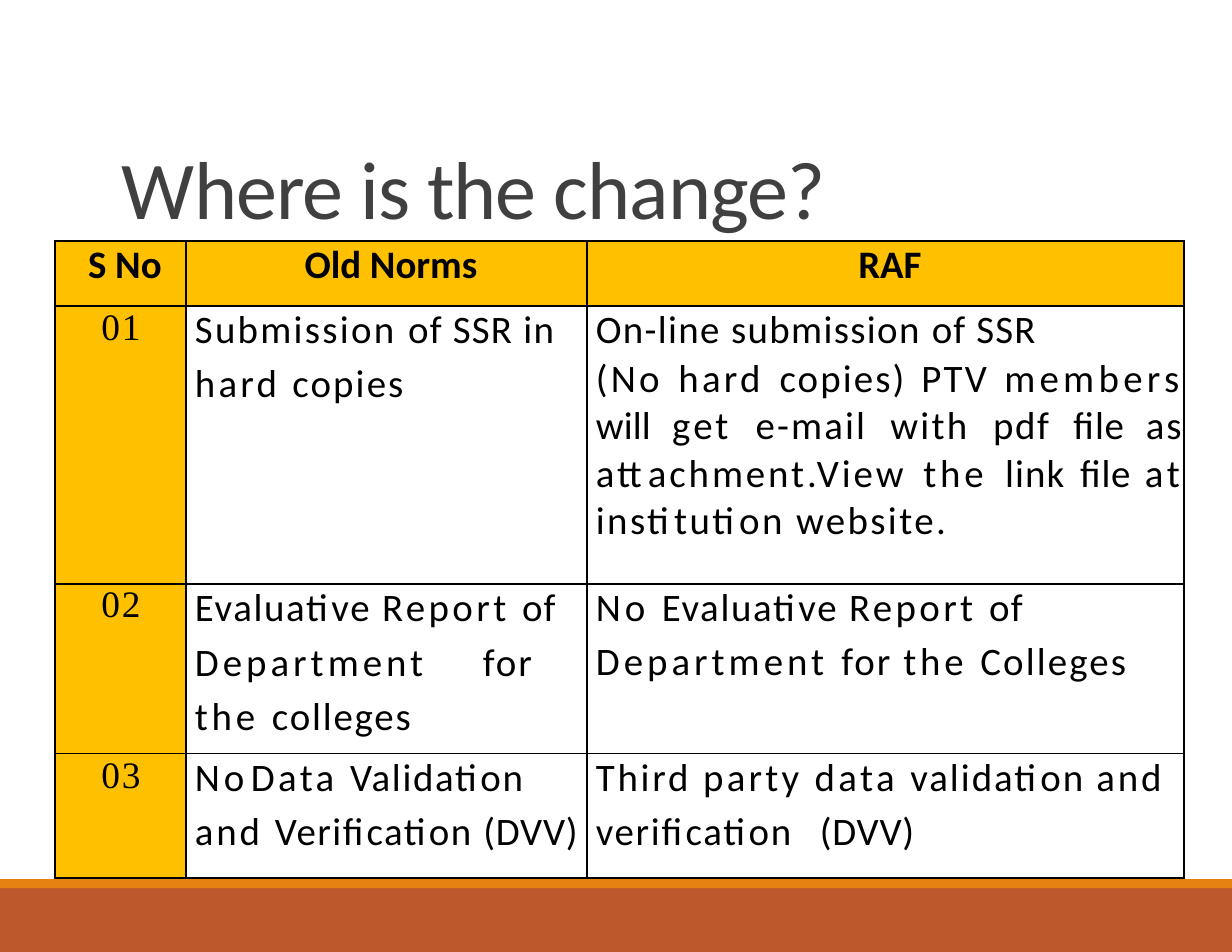
from pptx import Presentation
from pptx.dml.color import RGBColor
from pptx.enum.shapes import MSO_CONNECTOR, MSO_SHAPE
from pptx.enum.text import MSO_ANCHOR, PP_ALIGN
from pptx.util import Pt
from lxml.etree import SubElement
from pptx.oxml.ns import qn

THEME = {
    "ink": "000000", "title": "404040", "gold": "FFC000", "rule": "808080",
    "band": "BD582C", "strip": "E48312",
    "sans": "Calibri", "serif": "Times New Roman",
    "head": 25, "body": 25, "num": 24, "big": 52.8,
}
TITLE = "Where is the change?"
HEADS = [("S No", 4.3), ("Old Norms", 4.3), ("RAF", 0.8)]
ROWS = [
    ("01",
     [{"runs": [("Submission ", 1.5), ("of SSR ", 0.8), ("in", 0.9)]},
      {"runs": [("hard ", 2.1), ("copies", 1.4)]}],
     [{"runs": [("On-line submission ", 0.9), ("of ", 0.7), ("SSR", 0.8)]},
      {"before": 0.8, "runs": [
          ("(No hard ", 2.1), ("copies) ", 1.4), ("PTV ", 1.6),
          ("members ", 2.8), ("will ", 0.1), ("get ", 2), ("e-mail ", 1.4),
          ("with ", 1.5), ("pdf ", 1.1), ("file ", 0.3), ("as ", 1.4),
          ("attachment.View ", 1.9), ("the ", 2.5), ("link ", 0.7),
          ("file ", 0.3), ("at ", 2.5), ("institution website.", 1.6)]}]),
    ("02",
     [{"runs": [("Evaluative ", 1.1), ("Report ", 2.2), ("of", 0.7)]},
      {"before": 0, "line": 1.15, "right": 34, "runs": [
          ("Department ", 2.6), ("for ", 1.3), ("the ", 2.5),
          ("colleges", 1.2)]}],
     [{"runs": [("No ", 2.5), ("Evaluative ", 1.1), ("Report ", 2.2),
                ("of", 0.8)]},
      {"runs": [("Department ", 2.6), ("for ", 1.3), ("the ", 2.5),
                ("Colleges", 1.4)]}]),
    ("03",
     [{"tab": 53.3, "runs": [("No\t", 2.5), ("Data ", 2.2),
                             ("Validation", 1.1)]},
      {"runs": [("and ", 1.9), ("Verification ", 1), ("(DVV)", 0.5)]}],
     [{"runs": [("Third ", 1.8), ("party ", 2.1), ("data ", 2.2),
                ("validation ", 1.3), ("and", 1.9)]},
      {"tab": 144, "runs": [("verification\t", 1.1), ("(DVV)", 0.5)]}]),
]
WIDTHS = [84.2, 257.8, 383.8]
HEIGHTS = [41.8, 178.6, 109.4, 79.9]
VERT = [1.5, 1, 1.5, 1.5]
HORIZ = [1.5, 1.5, 1.5, 1, 1]
PAGE = (792, 612)
LEFT, TOP = 35.3, 154.8


def color(name):
    return RGBColor.from_string(THEME[name])


def style(run, size, face, tone="ink", bold=False, gap=0):
    font = run.font
    font.size, font.name, font.bold = Pt(THEME[size]), THEME[face], bold
    font.color.rgb = color(tone)
    if gap:
        run._r.get_or_add_rPr().set("spc", str(round(gap * 100)))


def layout(para, align, left, before, line=None, right=0, tab=None):
    para.alignment, para.space_before = align, Pt(before)
    if line:
        para.line_spacing = line
    props = para._p.get_or_add_pPr()
    props.set("marL", str(Pt(left)))
    props.set("indent", "0")
    if right:
        props.set("marR", str(Pt(right)))
    if tab:
        stops = SubElement(props, qn("a:tabLst"))
        SubElement(stops, qn("a:tab"), pos=str(Pt(tab)), algn="l")


def frame(cell, row, col):
    props = cell._tc.get_or_add_tcPr()
    sides = {"L": VERT[col], "R": VERT[col + 1],
             "T": HORIZ[row], "B": HORIZ[row + 1]}
    for side, width in sides.items():
        edge = SubElement(props, qn("a:ln" + side), w=str(Pt(width)))
        fill = SubElement(edge, qn("a:solidFill"))
        SubElement(fill, qn("a:srgbClr"), val=THEME["ink"])
    cell.margin_left = cell.margin_right = cell.margin_bottom = Pt(0)
    cell.margin_top = Pt(0.7)
    if row == 0 or col == 0:
        cell.fill.solid()
        cell.fill.fore_color.rgb = color("gold")
    else:
        cell.fill.background()


def label(cell, text, size, face, left, before, **look):
    para = cell.text_frame.paragraphs[0]
    para.text = text
    layout(para, PP_ALIGN.CENTER, left, before)
    style(para.runs[0], size, face, **look)


def prose(cell, paras):
    body = cell.text_frame
    for i, item in enumerate(paras):
        para = body.add_paragraph() if i else body.paragraphs[0]
        opts = {"before": 4.3 if i else 0.8, **item}
        for text, gap in opts.pop("runs"):
            run = para.add_run()
            run.text = text
            style(run, "body", "sans", gap=gap)
        layout(para, PP_ALIGN.JUSTIFY, 5.8, **opts)


def bar(slide, top, height, tone):
    shape = slide.shapes.add_shape(
        MSO_SHAPE.RECTANGLE, Pt(0), Pt(top), Pt(PAGE[0]), Pt(height))
    shape.shadow.inherit = False
    shape.fill.solid()
    shape.fill.fore_color.rgb = color(tone)
    shape.line.fill.background()


def heading(slide):
    rule = slide.shapes.add_connector(
        MSO_CONNECTOR.STRAIGHT, Pt(77.8), Pt(TOP), Pt(725), Pt(TOP))
    rule.line.color.rgb, rule.line.width = color("rule"), Pt(0.5)
    SubElement(rule._element.spPr, qn("a:effectLst"))
    box = slide.shapes.add_textbox(Pt(71.3), Pt(25.9), Pt(653), Pt(129.6))
    body = box.text_frame
    body.word_wrap, body.vertical_anchor = True, MSO_ANCHOR.BOTTOM
    body.text = TITLE
    body.paragraphs[0].line_spacing = 0.85
    style(body.paragraphs[0].runs[0], "big", "sans", "title", gap=-0.6)


def grid(slide):
    table = slide.shapes.add_table(
        len(HEIGHTS), len(WIDTHS), Pt(LEFT), Pt(TOP),
        Pt(sum(WIDTHS)), Pt(sum(HEIGHTS))).table
    table.first_row = table.horz_banding = False
    for col, width in zip(table.columns, WIDTHS):
        col.width = Pt(width)
    for r, height in enumerate(HEIGHTS):
        table.rows[r].height = Pt(height)
        for c in range(len(WIDTHS)):
            frame(table.cell(r, c), r, c)
    for c, (text, before) in enumerate(HEADS):
        label(table.cell(0, c), text, "head", "sans", 5.8, before, bold=True)
    for r, (num, *cols) in enumerate(ROWS, 1):
        label(table.cell(r, 0), num, "num", "serif", 0.7, 0.8, gap=1.1)
        for c, paras in enumerate(cols, 1):
            prose(table.cell(r, c), paras)


def main():
    """Build the slide comparing the old norms with RAF."""
    deck = Presentation()
    deck.slide_width, deck.slide_height = map(Pt, PAGE)
    slide = deck.slides.add_slide(deck.slide_layouts[6])
    bar(slide, 571, 41, "band")
    bar(slide, 565.2, 5.8, "strip")
    heading(slide)
    grid(slide)
    deck.save("out.pptx")


if __name__ == "__main__":
    main()
